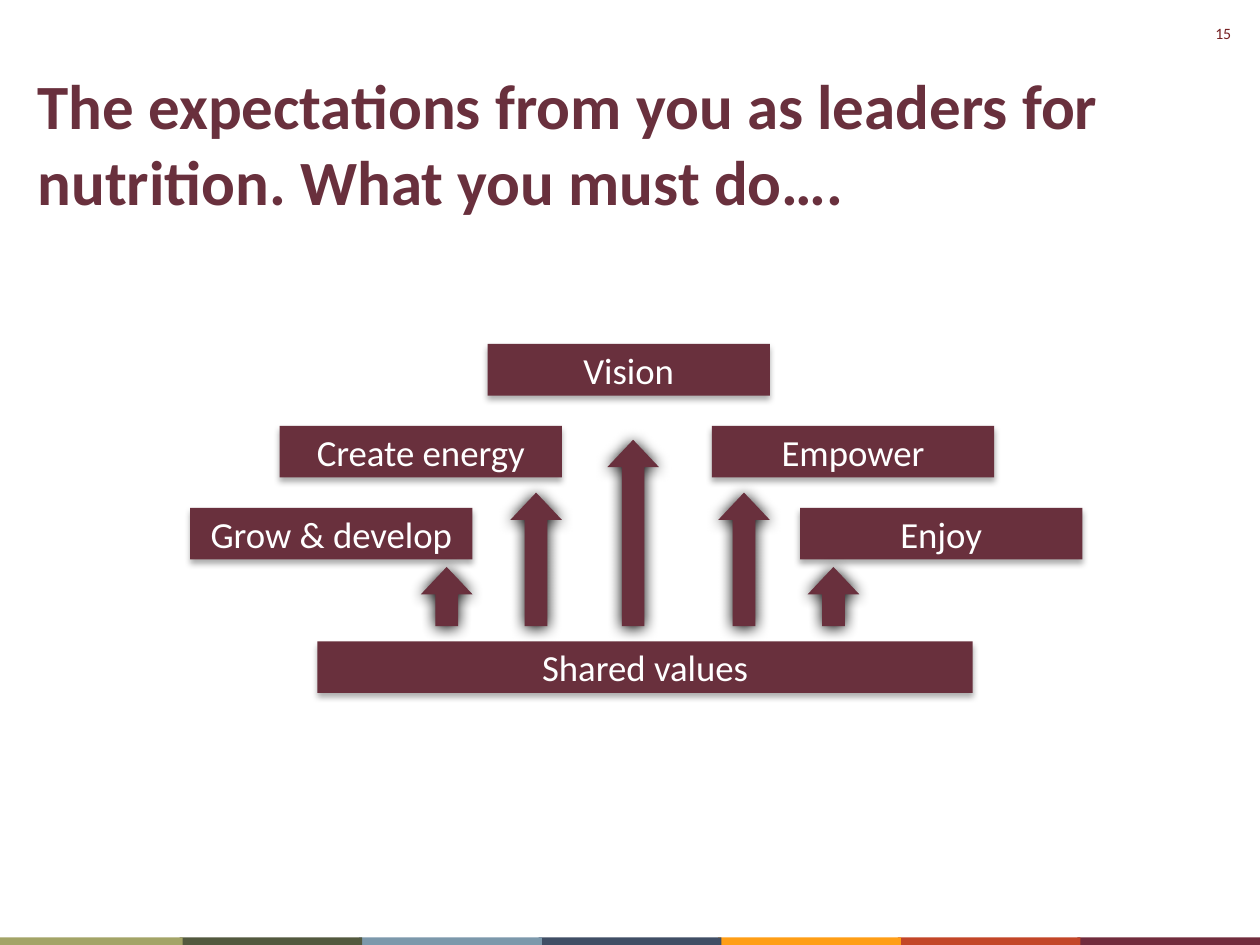
from lxml import etree
from pptx import Presentation
from pptx.dml.color import RGBColor
from pptx.enum.shapes import MSO_SHAPE
from pptx.enum.text import MSO_ANCHOR, PP_ALIGN
from pptx.oxml.ns import qn
from pptx.util import Inches, Pt

FONT = "Calibri"
COLORS = {"plum": "69303D", "number": "762123", "white": "FFFFFF", "shadow": "000000"}

TITLE = "The expectations from you as leaders for nutrition. What you must do…."
PAGE_NUMBER = "15"

# Footer strip, left to right
STRIP = ["A3A467", "53593E", "7C98AB", "404E65", "FF9E16", "C34628", "712C3D"]
STRIP_WIDTH, STRIP_HEIGHT = 1.45, 0.06

# Label, left, top, width
BOX_HEIGHT, BOX_WIDTH = 0.41, 2.24
VISION_TOP, ROW_STEP = 2.73, 0.65
BASE = ("Shared values", 2.52, 5.09, 5.2)
BOXES = [BASE] + [
    (label, left, VISION_TOP + row * ROW_STEP, BOX_WIDTH)
    for label, left, row in [
        ("Vision", 3.87, 0),
        ("Create energy", 2.22, 1),
        ("Empower", 5.65, 1),
        ("Grow & develop", 1.51, 2),
        ("Enjoy", 6.35, 2),
    ]
]

# Left, top; every arrow stands on the same line
ARROWS = [(3.34, 4.5), (4.05, 3.91), (4.82, 3.49), (5.7, 3.91), (6.41, 4.5)]
ARROW_WIDTH, ARROW_BOTTOM = 0.41, 4.97

# Opacity in percent, blur and distance in points
BOX_SHADOW = (32, 3.5, 2.2)
ARROW_SHADOW = (100, 8.5, 1)


def add_filled(slide, kind, left, top, width, height, color):
    shape = slide.shapes.add_shape(
        kind, Inches(left), Inches(top), Inches(width), Inches(height))
    shape.shadow.inherit = False
    shape.fill.solid()
    shape.fill.fore_color.rgb = RGBColor.from_string(color)
    shape.line.fill.background()
    return shape


def add_shadow(shape, opacity, blur, distance):
    effects = shape._element.spPr.find(qn("a:effectLst"))
    outer = etree.SubElement(
        effects, qn("a:outerShdw"), blurRad=str(Pt(blur)), dist=str(Pt(distance)),
        dir="5400000", rotWithShape="0")
    color = etree.SubElement(outer, qn("a:srgbClr"), val=COLORS["shadow"])
    etree.SubElement(color, qn("a:alpha"), val=str(opacity * 1000))


def write(shape, text, size, color, align, bold=False, anchor=MSO_ANCHOR.TOP):
    frame = shape.text_frame
    frame.word_wrap = True
    frame.vertical_anchor = anchor
    paragraph = frame.paragraphs[0]
    paragraph.text = text
    paragraph.alignment = align
    font = paragraph.font
    font.name, font.size, font.bold = FONT, Pt(size), bold
    font.color.rgb = RGBColor.from_string(COLORS[color])


def add_text(slide, left, top, width, height, *style, **options):
    box = slide.shapes.add_textbox(
        Inches(left), Inches(top), Inches(width), Inches(height))
    write(box, *style, **options)


def main():
    presentation = Presentation()
    presentation.slide_width, presentation.slide_height = Inches(10), Inches(7.5)
    slide = presentation.slides.add_slide(presentation.slide_layouts[6])

    # Page number and title
    add_text(slide, 9.34, 0.14, 0.53, 0.25, PAGE_NUMBER, 9, "number", PP_ALIGN.RIGHT)
    add_text(slide, 0.2, 0.48, 9.8, 1.25, TITLE, 36, "plum", PP_ALIGN.LEFT, bold=True)

    # Footer strip: each piece slightly overlaps the one to its right
    step = (10 - STRIP_WIDTH) / (len(STRIP) - 1)
    for index, color in reversed(list(enumerate(STRIP))):
        add_filled(slide, MSO_SHAPE.RECTANGLE, index * step, 7.5 - STRIP_HEIGHT,
                   STRIP_WIDTH, STRIP_HEIGHT, color)

    # Labelled boxes
    for label, left, top, width in BOXES:
        box = add_filled(slide, MSO_SHAPE.RECTANGLE, left, top, width, BOX_HEIGHT,
                         COLORS["plum"])
        add_shadow(box, *BOX_SHADOW)
        write(box, label, 21, "white", PP_ALIGN.CENTER, anchor=MSO_ANCHOR.MIDDLE)

    # Arrows rising from the shared values
    for left, top in ARROWS:
        arrow = add_filled(slide, MSO_SHAPE.UP_ARROW, left, top, ARROW_WIDTH,
                           ARROW_BOTTOM - top, COLORS["plum"])
        arrow.adjustments[0], arrow.adjustments[1] = 0.44, 0.53
        add_shadow(arrow, *ARROW_SHADOW)

    presentation.save("out.pptx")


if __name__ == "__main__":
    main()
